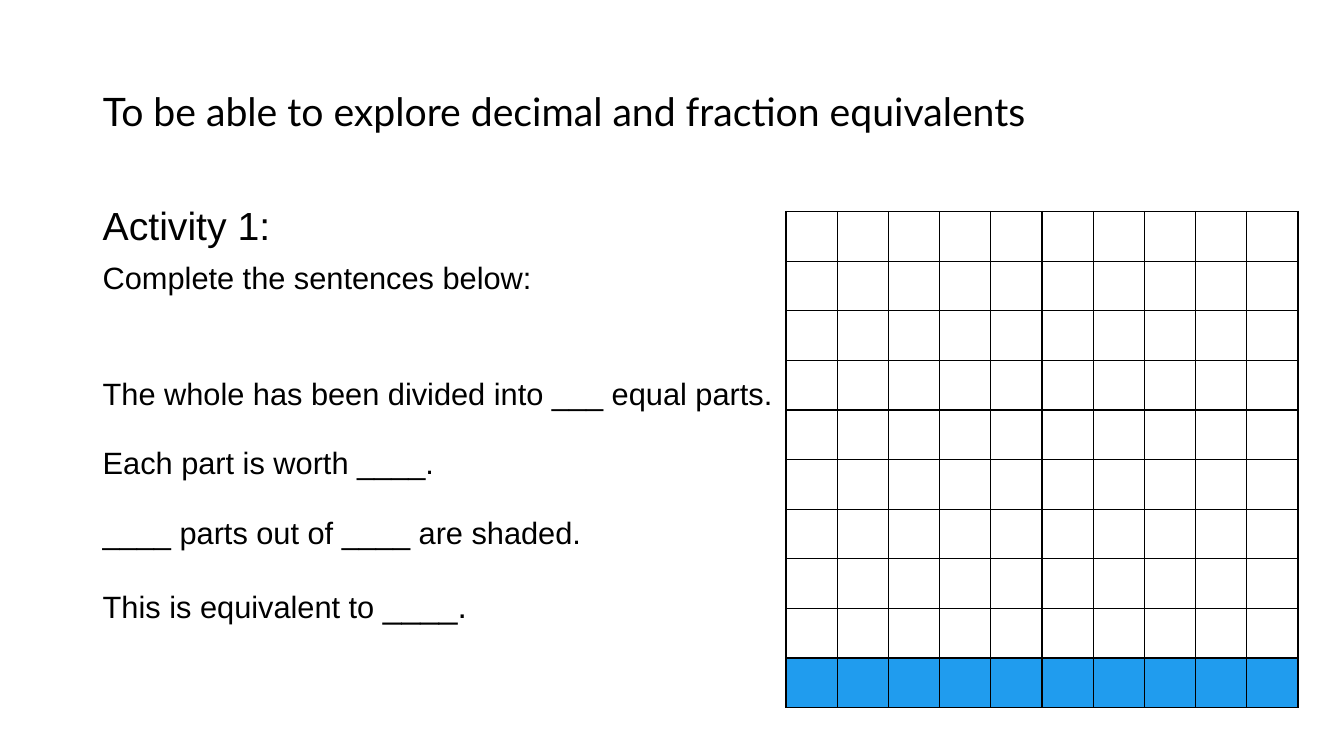
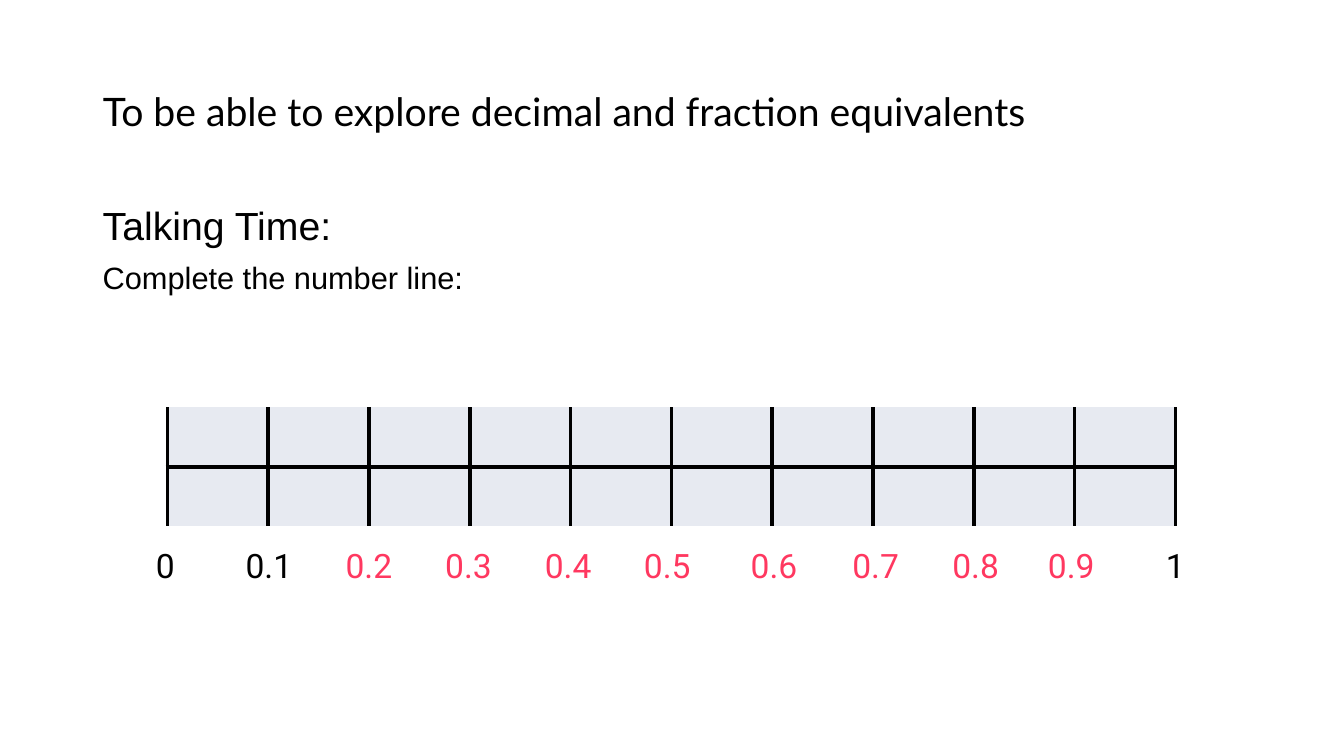
from lxml.etree import SubElement
from pptx import Presentation
from pptx.dml.color import RGBColor
from pptx.enum.text import MSO_ANCHOR, PP_ALIGN
from pptx.oxml.ns import qn
from pptx.util import Cm, Pt

# Shared style
BLACK = RGBColor(0x00, 0x00, 0x00)
WHITE = RGBColor(0xFF, 0xFF, 0xFF)
BLUE = RGBColor(0x20, 0x9C, 0xEE)
PALE = RGBColor(0xE7, 0xEA, 0xF1)
PINK = RGBColor(0xFF, 0x38, 0x60)
TITLE = "To be able to explore decimal and fraction equivalents"
TITLE_FONT, BODY_FONT, LABEL_FONT = "Lato", "Arial", "Roboto"
LEFT = Cm(2.34)
BORDER_SIDES = ("L", "R", "T", "B")

# Sentences: runs of (text, size), and space before
SENTENCES = [
    ([("The whole has been divided into ___ equal parts.", 22)], 43),
    ([("Each part is worth ____.", 22)], 10),
    ([("____ parts out of ____ are shaded.", 22)], 10),
    ([("This is equivalent to ", 22), ("____.", 24)], 10),
]

# Number line labels: text, left edge and width in cm, colour
LABELS = [
    ("0", 3.68, 1.17, BLACK),
    ("0.1", 5.94, 2.13, BLACK),
    ("0.2", 8.46, 2.13, PINK),
    ("0.3", 10.97, 2.13, PINK),
    ("0.4", 13.48, 2.13, PINK),
    ("0.5", 15.98, 2.13, PINK),
    ("0.6", 18.67, 2.13, PINK),
    ("0.7", 21.23, 2.13, PINK),
    ("0.8", 23.75, 2.13, PINK),
    ("0.9", 26.16, 2.13, PINK),
    ("1", 29.13, 1.17, BLACK),
]


def style_font(font, name, size, color):
    font.name = name
    font.size = Pt(size)
    font.color.rgb = color


def add_titled_slide(presentation):
    slide = presentation.slides.add_slide(presentation.slide_layouts[5])
    title = slide.shapes.title
    title.left, title.top, title.width, title.height = LEFT, Cm(1.02), Cm(24.38), Cm(3.68)
    text_frame = title.text_frame
    text_frame.text = TITLE
    text_frame.word_wrap = True
    text_frame.vertical_anchor = MSO_ANCHOR.MIDDLE
    paragraph = text_frame.paragraphs[0]
    paragraph.alignment = PP_ALIGN.LEFT
    paragraph.line_spacing = 0.9
    style_font(paragraph.runs[0].font, TITLE_FONT, 28, BLACK)
    return slide


def add_text_box(slide, left, top, width, height):
    text_frame = slide.shapes.add_textbox(left, top, width, height).text_frame
    text_frame.word_wrap = True
    return text_frame


def fill_paragraph(paragraph, runs, line_spacing, space_before=0):
    paragraph.line_spacing = line_spacing
    paragraph.space_before = Pt(space_before)
    for text, size in runs:
        run = paragraph.add_run()
        run.text = text
        style_font(run.font, BODY_FONT, size, BLACK)


def add_body(slide, heading, instruction, width, height, sentences=()):
    text_frame = add_text_box(slide, LEFT, Cm(5.08), width, height)
    fill_paragraph(text_frame.paragraphs[0], [(heading, 28)], 0.9)
    fill_paragraph(text_frame.add_paragraph(), [(instruction, 22)], 0.9, 10)
    for runs, space_before in sentences:
        fill_paragraph(text_frame.add_paragraph(), runs, 1.5, space_before)


def set_borders(cell, sides, width):
    """Draw black borders on the given sides and none on the others."""
    properties = cell._tc.get_or_add_tcPr()
    for side in BORDER_SIDES:
        line = SubElement(properties, qn(f"a:ln{side}"), w=str(Pt(width)))
        if side in sides:
            fill = SubElement(line, qn("a:solidFill"))
            SubElement(fill, qn("a:srgbClr"), val=str(BLACK))
        else:
            SubElement(line, qn("a:noFill"))


def add_grid(slide, left, top, cell_width, cell_height, row_fills, row_sides, border_width):
    """Add a ten-column grid with one fill and one set of borders per row."""
    rows, columns = len(row_fills), 10
    frame = slide.shapes.add_table(
        rows, columns, left, top, cell_width * columns, cell_height * rows)
    table = frame.table
    table.first_row = False
    table.horz_banding = False
    for column in table.columns:
        column.width = cell_width
    for row, color, sides in zip(table.rows, row_fills, row_sides):
        row.height = cell_height
        for cell in row.cells:
            set_borders(cell, sides, border_width)
            cell.fill.solid()
            cell.fill.fore_color.rgb = color


def add_label(slide, text, left, width, color):
    text_frame = add_text_box(slide, Cm(left), Cm(13.6), Cm(width), Cm(1.27))
    text_frame.text = text
    style_font(text_frame.paragraphs[0].runs[0].font, LABEL_FONT, 24, color)


def add_activity_slide(presentation):
    slide = add_titled_slide(presentation)
    add_body(slide, "Activity 1:", "Complete the sentences below:",
             Cm(18.11), Cm(13.31), SENTENCES)
    add_grid(slide, Cm(19.81), Cm(5.33), Cm(1.29), Cm(1.25),
             [WHITE] * 9 + [BLUE], [BORDER_SIDES] * 10, 1)


def add_number_line_slide(presentation):
    slide = add_titled_slide(presentation)
    add_body(slide, "Talking Time:", "Complete the number line:", Cm(29.21), Cm(12.09))
    add_grid(slide, Cm(4.22), Cm(10.26), Cm(2.54), Cm(1.5),
             [PALE, PALE], ["LRB", "LRT"], 3)
    for label in LABELS:
        add_label(slide, *label)


def main():
    presentation = Presentation()
    presentation.slide_width = Cm(33.87)
    presentation.slide_height = Cm(19.05)
    add_activity_slide(presentation)
    add_number_line_slide(presentation)
    presentation.save("out.pptx")


if __name__ == "__main__":
    main()
